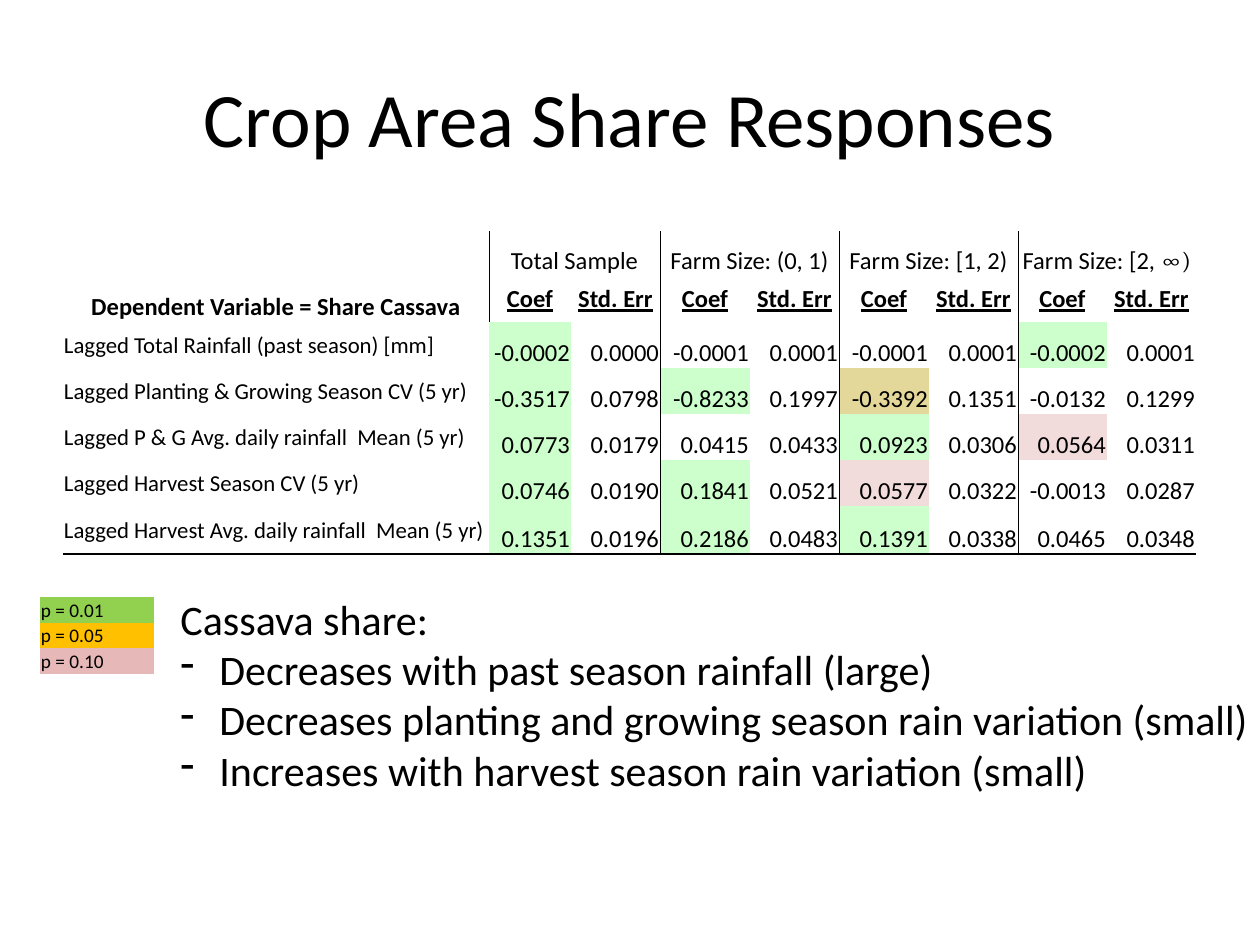
from lxml import etree
from pptx import Presentation
from pptx.dml.color import RGBColor
from pptx.enum.text import MSO_ANCHOR, MSO_AUTO_SIZE, PP_ALIGN
from pptx.oxml.ns import qn
from pptx.util import Emu, Pt

LEFT, MID, RIGHT = PP_ALIGN.LEFT, PP_ALIGN.CENTER, PP_ALIGN.RIGHT
CENTRE, BASE = MSO_ANCHOR.MIDDLE, MSO_ANCHOR.BOTTOM
BLACK, GREEN, SAND, PINK = "000000", "CCFFCC", "E4D79A", "F2DCDB"

GROUPS = ["Total Sample", "Farm Size: (0, 1)", "Farm Size: [1, 2)", "Farm Size: [2, ∞)"]
# Label, eight values, and the fills of the four Coef cells
ROWS = [
    ("Lagged Total Rainfall (past season) [mm]",
     "-0.0002 0.0000 -0.0001 0.0001 -0.0001 0.0001 -0.0002 0.0001",
     (GREEN, None, None, GREEN)),
    ("Lagged Planting & Growing Season CV (5 yr)",
     "-0.3517 0.0798 -0.8233 0.1997 -0.3392 0.1351 -0.0132 0.1299",
     (GREEN, GREEN, SAND, None)),
    ("Lagged P & G Avg. daily rainfall  Mean (5 yr)",
     "0.0773 0.0179 0.0415 0.0433 0.0923 0.0306 0.0564 0.0311",
     (GREEN, None, GREEN, PINK)),
    ("Lagged Harvest Season CV (5 yr)",
     "0.0746 0.0190 0.1841 0.0521 0.0577 0.0322 -0.0013 0.0287",
     (GREEN, GREEN, PINK, None)),
    ("Lagged Harvest Avg. daily rainfall  Mean (5 yr)",
     "0.1351 0.0196 0.2186 0.0483 0.1391 0.0338 0.0465 0.0348",
     (GREEN, GREEN, GREEN, None)),
]
LEGEND = [("p = 0.01", "92D050"), ("p = 0.05", "FFC000"), ("p = 0.10", "E6B8B7")]
POINTS = [
    "Decreases with past season rainfall (large)",
    "Decreases planting and growing season rain variation (small)",
    "Increases with harvest season rain variation (small)",
]


def px(n):
    return Emu(round(n * 914400 / 126))


def paint(color, code):
    color.rgb = RGBColor.from_string(code)


def write(para, text, size, align=LEFT, **style):
    para.alignment = align
    run = para.add_run()
    run.text = text
    look = {"name": "Calibri", "size": Pt(size), **style}
    for key, value in look.items():
        setattr(run.font, key, value)
    paint(run.font.color, BLACK)


def rule(cell, lines):
    """Draw the sides named in lines (side: points) and hide the others."""
    props = cell._tc.get_or_add_tcPr()
    for side in "LRTB":
        line = etree.SubElement(props, qn(f"a:ln{side}"))
        if side in lines:
            line.set("w", str(Pt(lines[side])))
            fill = etree.SubElement(line, qn("a:solidFill"))
            etree.SubElement(fill, qn("a:srgbClr")).set("val", BLACK)
        else:
            etree.SubElement(line, qn("a:noFill"))


def grid(slide, x, y, cols, rows):
    """Add a plain table with the given column widths and row heights."""
    frame = slide.shapes.add_table(len(rows), len(cols), px(x), px(y),
                                   px(sum(cols)), px(sum(rows)))
    table = frame.table
    table.first_row = table.horz_banding = False
    for col, width in zip(table.columns, cols):
        col.width = px(width)
    for row, height in zip(table.rows, rows):
        row.height = px(height)
    return table


def dress(cell, lines, fill=None, anchor=BASE):
    rule(cell, lines)
    look = {"margin_left": px(1), "margin_right": px(1), "margin_top": px(1),
            "margin_bottom": 0, "vertical_anchor": anchor}
    for key, value in look.items():
        setattr(cell, key, value)
    if fill:
        cell.fill.solid()
        paint(cell.fill.fore_color, fill)
    else:
        cell.fill.background()


def edges(r, c, last):
    """Lines round a cell: group dividers, and a rule under the last row."""
    cuts = {3, 5, 7} | ({1} if r < 2 else set())
    end = c + 1 if r == 0 and c % 2 else c
    lines = {}
    if c in cuts:
        lines["L"] = 0.5
    if end + 1 in cuts:
        lines["R"] = 0.5
    if r == last:
        lines["B"] = 1
    return lines


def results(slide, x, y):
    heights = [45, 46, 46, 46, 46, 46, 48]
    table = grid(slide, x, y, [426, 82, 89, 90, 89, 90, 89, 89, 89], heights)
    last = len(heights) - 1
    for r in range(len(heights)):
        for c in range(9):
            fill = ROWS[r - 2][2][c // 2] if r > 1 and c % 2 else None
            central = r == 1 and c or r > 1 and not c
            dress(table.cell(r, c), edges(r, c, last), fill,
                  CENTRE if central else BASE)

    def put(r, c, *args, **style):
        write(table.cell(r, c).text_frame.paragraphs[0], *args, **style)

    table.cell(0, 0).merge(table.cell(1, 0))
    put(0, 0, "Dependent Variable = Share Cassava", 14, MID, bold=True)
    for i, group in enumerate(GROUPS):
        c = 1 + 2 * i
        table.cell(0, c).merge(table.cell(0, c + 1))
        head, sign, _ = group.partition("∞)")
        put(0, c, head, 14, MID)
        if sign:
            put(0, c, sign, 14, MID, name="Cambria")
        for step, name in enumerate(("Coef", "Std. Err")):
            put(1, c + step, name, 14, MID, bold=True, underline=True)
    for r, (label, values, _) in enumerate(ROWS, 2):
        put(r, 0, label, 13)
        for c, value in enumerate(values.split(), 1):
            put(r, c, value, 14, RIGHT)


def legend(slide, x, y):
    table = grid(slide, x, y, [114], [26, 25, 26])
    for r, (label, fill) in enumerate(LEGEND):
        cell = table.cell(r, 0)
        dress(cell, {}, fill)
        write(cell.text_frame.paragraphs[0], label, 11)


def title(slide, x, y, w, h):
    frame = slide.shapes.add_textbox(px(x), px(y), px(w), px(h)).text_frame
    frame.word_wrap = True
    frame.vertical_anchor = CENTRE
    write(frame.paragraphs[0], "Crop Area Share Responses", 44, MID)


def dash(para):
    props = para._p.get_or_add_pPr()
    props.set("marL", str(px(39)))
    props.set("indent", str(-px(39)))
    etree.SubElement(props, qn("a:buFontTx"))
    etree.SubElement(props, qn("a:buChar")).set("char", "-")


def notes(slide, x, y, w, h):
    """Add the reading of the results as a dashed list."""
    frame = slide.shapes.add_textbox(px(x), px(y), px(w), px(h)).text_frame
    frame.word_wrap = False
    frame.auto_size = MSO_AUTO_SIZE.SHAPE_TO_FIT_TEXT
    write(frame.paragraphs[0], "Cassava share:", 24)
    for point in POINTS:
        para = frame.add_paragraph()
        dash(para)
        write(para, point, 24)


def main():
    deck = Presentation()
    deck.slide_width, deck.slide_height = px(1260), px(945)
    slide = deck.slides.add_slide(deck.slide_layouts[6])
    title(slide, 63, 38, 1134, 157)
    results(slide, 63, 231)
    legend(slide, 40, 597)
    notes(slide, 168, 587, 1105, 217)
    deck.save("out.pptx")


if __name__ == "__main__":
    main()
